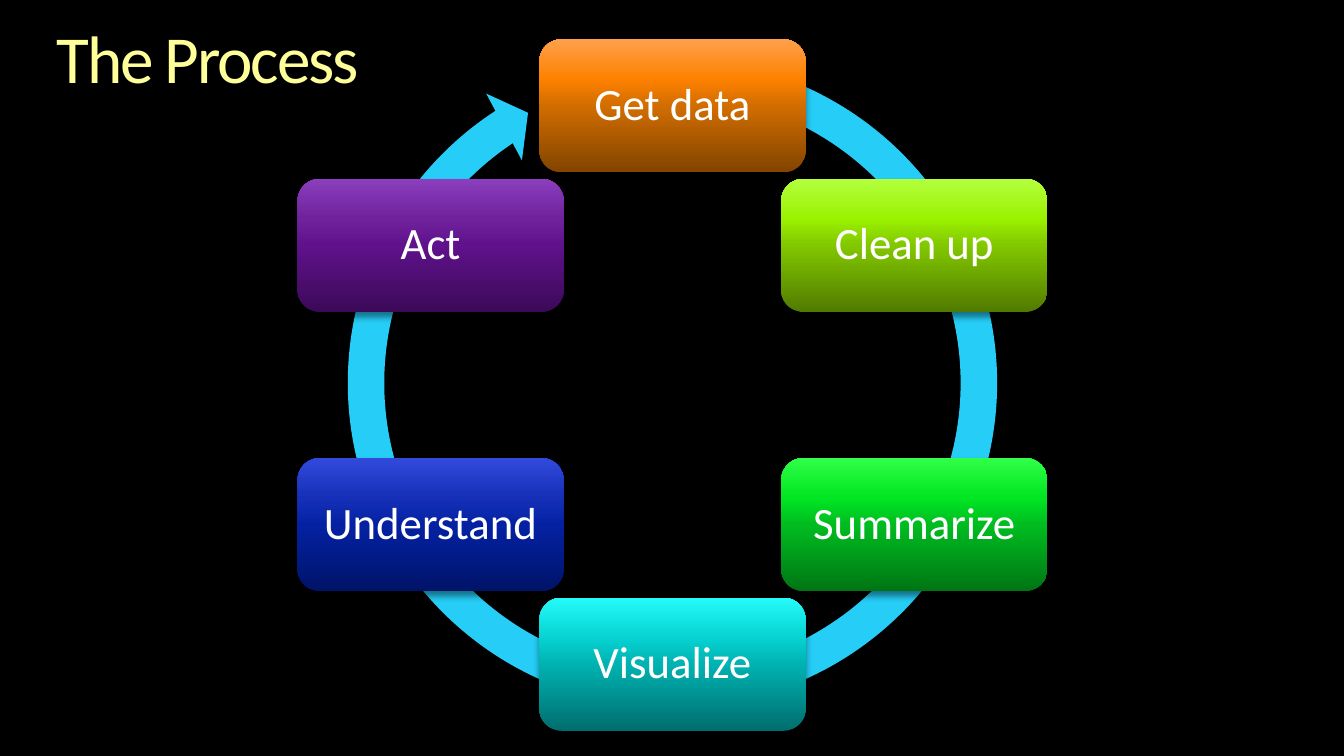
from math import cos, radians, sin

from lxml import etree
from pptx import Presentation
from pptx.dml.color import RGBColor
from pptx.enum.shapes import MSO_SHAPE
from pptx.enum.text import MSO_ANCHOR, MSO_AUTO_SIZE, PP_ALIGN
from pptx.oxml.ns import qn
from pptx.util import Inches, Pt

ROUND, LOOP = MSO_SHAPE.ROUNDED_RECTANGLE, MSO_SHAPE.CIRCULAR_ARROW
TOP, MIDDLE = MSO_ANCHOR.TOP, MSO_ANCHOR.MIDDLE
LEFT, CENTER = PP_ALIGN.LEFT, PP_ALIGN.CENTER
GROW = MSO_AUTO_SIZE.SHAPE_TO_FIT_TEXT


def paint(fill, color):
    fill.solid()
    fill.fore_color.rgb = RGBColor.from_string(color)


def add_color(parent, color):
    return etree.SubElement(parent, qn("a:srgbClr"), val=color)


def blend(fill, stops, angle):
    """Fill with (percent, colour) stops; the angle runs counter-clockwise."""
    fill.gradient()
    fill.gradient_angle = angle
    # Replace the two default stops
    items = fill._fill._gradFill.find(qn("a:gsLst"))
    for item in list(items):
        items.remove(item)
    for pos, color in stops:
        stop = etree.SubElement(items, qn("a:gs"), pos=str(pos * 1000))
        add_color(stop, color)


def write(frame, text, size=32, color="FFFFFF", align=CENTER,
          anchor=MIDDLE, inset=0.19, font="Calibri"):
    frame.word_wrap = True
    frame.vertical_anchor = anchor
    frame.margin_left = frame.margin_right = Inches(inset)
    frame.margin_top = frame.margin_bottom = Inches(inset)
    para = frame.paragraphs[0]
    para.alignment = align
    para.line_spacing = 0.9
    para.space_before = Pt(0)
    run = para.add_run()
    run.text = text
    run.font.name = font
    run.font.size = Pt(size)
    paint(run.font.fill, color)
    return run


class Deck:
    def __init__(self, back):
        self.prs = Presentation()
        self.prs.slide_width = Inches(13.33)
        self.prs.slide_height = Inches(7.5)
        self.slide = self.prs.slides.add_slide(self.prs.slide_layouts[5])
        paint(self.slide.background.fill, back)

    def title(self, text, stops):
        shape = self.slide.shapes.title
        shape.left, shape.top = Inches(0.56), Inches(0.25)
        shape.width, shape.height = Inches(12.22), Inches(0.73)
        run = write(shape.text_frame, text, size=48, align=LEFT,
                    anchor=TOP, inset=0)
        shape.text_frame.auto_size = GROW
        blend(run.font.fill, stops, 270)
        run.font._element.set("spc", "-150")

    def shape(self, kind, mid_x, mid_y, width, height, blur, alpha):
        shape = self.slide.shapes.add_shape(
            kind, Inches(mid_x - width / 2), Inches(mid_y - height / 2),
            Inches(width), Inches(height))
        shape.line.fill.background()
        # Soft shadow straight below
        shape.shadow.inherit = False
        effects = shape._element.spPr.find(qn("a:effectLst"))
        shade = etree.SubElement(
            effects, qn("a:outerShdw"), blurRad=str(Pt(blur)),
            dist=str(Pt(3)), dir="5400000", rotWithShape="0")
        etree.SubElement(add_color(shade, "000000"), qn("a:alpha"),
                         val=str(alpha * 1000))
        return shape

    def ring(self, mid_x, mid_y, size, color, adjust):
        shape = self.shape(LOOP, mid_x, mid_y, size, size, 4, 35)
        for i, percent in enumerate(adjust):
            shape.adjustments[i] = percent / 100
        paint(shape.fill, color)

    def step(self, text, mid_x, mid_y, colors):
        shape = self.shape(ROUND, mid_x, mid_y, 2.64, 1.32, 5, 45)
        blend(shape.fill, zip((0, 50, 70, 100), colors), 90)
        write(shape.text_frame, text)


STEPS = [
    ("Get data", ("824400", "D16D00", "FE8100", "FFA04B")),
    ("Clean up", ("517B00", "82C700", "9BF200", "B3FF3E")),
    ("Summarize", ("007514", "00BC20", "00E622", "30FF48")),
    ("Visualize", ("006E6E", "00B2B1", "06D3D2", "25FAF9")),
    ("Understand", ("001368", "0421A3", "1530B7", "324ADB")),
    ("Act", ("3C0958", "5F128B", "6F229C", "8B3FBD")),
]
MID_X, MID_Y, RADIUS = 6.67, 3.82, 2.77


def main():
    deck = Deck("000000")
    deck.title("The Process",
               [(0, "FFFFB9"), (36, "FFFF99"), (86, "F6AE1E")])

    # Arrow behind the steps
    deck.ring(MID_X, 3.8, 6.83, "26CEF7", (5.3, 312.6, 14200.2, 17143.4, 5.5))

    # Steps evenly spaced clockwise from the top
    for i, (text, colors) in enumerate(STEPS):
        turn = radians(360 / len(STEPS) * i)
        deck.step(text, MID_X + RADIUS * sin(turn),
                  MID_Y - RADIUS * cos(turn), colors)

    deck.prs.save("out.pptx")


if __name__ == "__main__":
    main()
